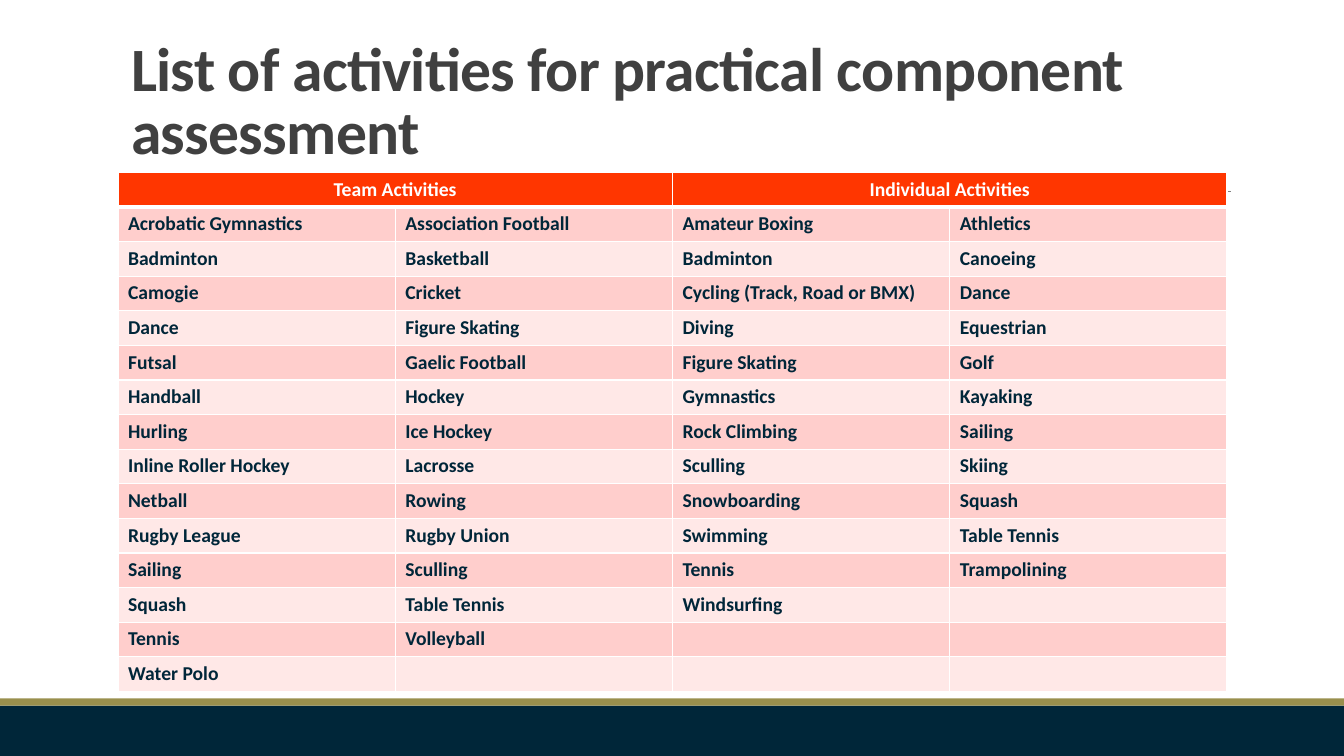
from itertools import zip_longest

from lxml import etree
from pptx import Presentation
from pptx.dml.color import RGBColor
from pptx.enum.shapes import MSO_CONNECTOR, MSO_SHAPE
from pptx.enum.text import MSO_ANCHOR, MSO_AUTO_SIZE, PP_ALIGN
from pptx.oxml.ns import qn
from pptx.util import Inches, Pt

STRAIGHT = MSO_CONNECTOR.STRAIGHT
RECTANGLE = MSO_SHAPE.RECTANGLE
BOTTOM = MSO_ANCHOR.BOTTOM
NO_AUTOFIT = MSO_AUTO_SIZE.NONE
LEFT, CENTER = PP_ALIGN.LEFT, PP_ALIGN.CENTER

NAVY = RGBColor(0x00, 0x26, 0x39)
GOLD = RGBColor(0x99, 0x8F, 0x4D)
GREY = RGBColor(0x80, 0x80, 0x80)
CHARCOAL = RGBColor(0x40, 0x40, 0x40)
WHITE = RGBColor(0xFF, 0xFF, 0xFF)
RED = RGBColor(0xFF, 0x36, 0x00)
PINK = RGBColor(0xFF, 0xCE, 0xCC)
PALE_PINK = RGBColor(0xFF, 0xE8, 0xE7)

FONT = "Calibri"
CELL_SIZE = Pt(14)
HEADINGS = ["Team Activities", "Individual Activities"]
ACTIVITIES = [
    ["Acrobatic Gymnastics", "Badminton", "Camogie", "Dance", "Futsal",
     "Handball", "Hurling", "Inline Roller Hockey", "Netball", "Rugby League",
     "Sailing", "Squash", "Tennis", "Water Polo"],
    ["Association Football", "Basketball", "Cricket", "Figure Skating",
     "Gaelic Football", "Hockey", "Ice Hockey", "Lacrosse", "Rowing",
     "Rugby Union", "Sculling", "Table Tennis", "Volleyball"],
    ["Amateur Boxing", "Badminton", "Cycling (Track, Road or BMX)", "Diving",
     "Figure Skating", "Gymnastics", "Rock Climbing", "Sculling",
     "Snowboarding", "Swimming", "Tennis", "Windsurfing"],
    ["Athletics", "Canoeing", "Dance", "Equestrian", "Golf", "Kayaking",
     "Sailing", "Skiing", "Squash", "Table Tennis", "Trampolining"],
]


def add_bar(s, top, height, color):
    """Add a band across the full slide width."""
    sp = s.shapes.add_shape(RECTANGLE, 0, Inches(top), Inches(13.33), Inches(height))
    sp.shadow.inherit = False
    sp.fill.solid()
    sp.fill.fore_color.rgb = color
    sp.line.fill.background()


def add_rule(s):
    rule = s.shapes.add_connector(
        STRAIGHT, Inches(1.31), Inches(1.9), Inches(12.21), Inches(1.9))
    rule.line.color.rgb = GREY
    rule.line.width = Pt(0.5)
    etree.SubElement(rule._element.spPr, qn("a:effectLst"))


def add_run(p, text, size, color):
    r = p.add_run()
    r.text = text
    r.font.name = FONT
    r.font.size = size
    r.font.bold = True
    r.font.color.rgb = color
    return r


def set_title(s, text):
    title = s.shapes.title
    title.left, title.top = Inches(1.2), Inches(0.12)
    title.width, title.height = Inches(11), Inches(1.59)
    tf = title.text_frame
    tf.word_wrap = True
    tf.auto_size = NO_AUTOFIT
    tf.vertical_anchor = BOTTOM
    p = tf.paragraphs[0]
    p.alignment = LEFT
    p.line_spacing = 0.85
    r = add_run(p, text, Pt(44), CHARCOAL)
    r.font._element.set("spc", "-50")


def set_borders(cell, top, bottom):
    """Draw white borders, with the top and bottom widths in points."""
    tc_pr = cell._tc.get_or_add_tcPr()
    for side, width in (("L", 1), ("R", 1), ("T", top), ("B", bottom)):
        ln = etree.SubElement(tc_pr, qn(f"a:ln{side}"), w=str(Pt(width)))
        fill = etree.SubElement(ln, qn("a:solidFill"))
        etree.SubElement(fill, qn("a:srgbClr"), val=str(WHITE))


def format_cell(cell, fill, top=1, bottom=1):
    set_borders(cell, top, bottom)
    cell.fill.solid()
    cell.fill.fore_color.rgb = fill


def write_cell(cell, text, color, align):
    p = cell.text_frame.paragraphs[0]
    p.alignment = align
    if text:
        add_run(p, text, CELL_SIZE, color)
    else:
        # An empty cell keeps the row low only with its own text size.
        etree.SubElement(p._p, qn("a:endParaRPr"), sz=str(int(CELL_SIZE.pt * 100)))


def add_activity_table(s):
    rows = list(zip_longest(*ACTIVITIES, fillvalue=""))
    n_rows, n_cols = len(rows) + 1, len(ACTIVITIES)
    table = s.shapes.add_table(
        n_rows, n_cols, Inches(1.17), Inches(1.71), Inches(11), Inches(5.15)).table
    table.horz_banding = False
    table.first_row = False

    for col in range(n_cols):
        format_cell(table.cell(0, col), RED, bottom=3)
    for i, heading in enumerate(HEADINGS):
        cell = table.cell(0, 2 * i)
        cell.merge(table.cell(0, 2 * i + 1))
        write_cell(cell, heading, WHITE, CENTER)

    for row, names in enumerate(rows, 1):
        for col, name in enumerate(names):
            cell = table.cell(row, col)
            format_cell(cell, PINK if row % 2 else PALE_PINK, top=3 if row == 1 else 1)
            write_cell(cell, name, NAVY, LEFT)


def main():
    prs = Presentation()
    prs.slide_width, prs.slide_height = Inches(13.33), Inches(7.5)
    s = prs.slides.add_slide(prs.slide_layouts[5])
    add_bar(s, 7, 0.5, NAVY)
    add_bar(s, 6.93, 0.07, GOLD)
    add_rule(s)
    set_title(s, "List of activities for practical component assessment")
    add_activity_table(s)
    prs.save("out.pptx")


if __name__ == "__main__":
    main()
